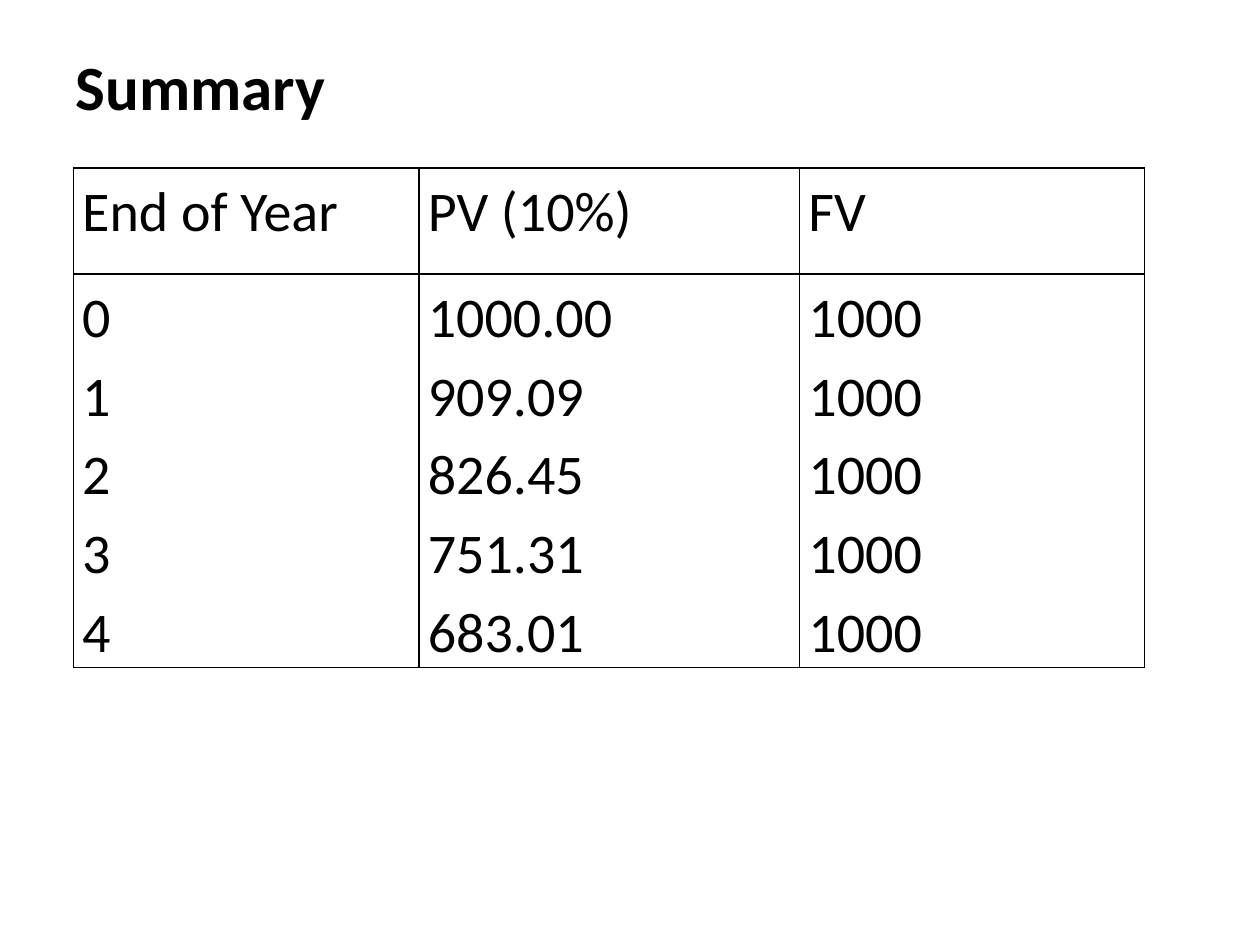
from lxml import etree
from pptx import Presentation
from pptx.dml.color import RGBColor
from pptx.enum import text
from pptx.oxml import ns
from pptx.util import Pt

BLACK = "000000"


def style(paragraph, size, bold=False):
    font = paragraph.font
    font.name, font.size, font.bold = "Calibri", Pt(size), bold
    font.color.rgb = RGBColor.from_string(BLACK)


def add_borders(cell):
    """Draw a 1 pt line on all four sides of a table cell."""
    properties = cell._tc.get_or_add_tcPr()
    for index, side in enumerate(("lnL", "lnR", "lnT", "lnB")):
        line = etree.Element(ns.qn(f"a:{side}"), w=str(Pt(1)))
        fill = etree.SubElement(line, ns.qn("a:solidFill"))
        etree.SubElement(fill, ns.qn("a:srgbClr"), val=BLACK)
        properties.insert(index, line)


deck = Presentation()
deck.slide_width, deck.slide_height = Pt(720), Pt(540)
page = deck.slides.add_slide(deck.slide_layouts[5])

title = page.shapes.title
title.left, title.top, title.width, title.height = Pt(36), Pt(21.6), Pt(648), Pt(356.4)
frame = title.text_frame
frame.text = "Summary"
frame.word_wrap = True
frame.auto_size = text.MSO_AUTO_SIZE.NONE
frame.vertical_anchor = text.MSO_ANCHOR.TOP
frame.margin_top = Pt(5.4)
heading = frame.paragraphs[0]
heading.alignment = text.PP_ALIGN.LEFT
style(heading, 36, bold=True)

columns = [
    ("End of Year", 197.5, ["0", "1", "2", "3", "4"]),
    ("PV (10%)", 217.5, ["1000.00", "909.09", "826.45", "751.31", "683.01"]),
    ("FV", 197, ["1000"] * 5),
]
row_heights = [60.5, 225]
table_width = sum(width for _, width, _ in columns)
table = page.shapes.add_table(
    len(row_heights), len(columns), Pt(42), Pt(96), Pt(table_width), Pt(sum(row_heights))
).table
table.horz_banding = False
table.first_row = False
for row, height in zip(table.rows, row_heights):
    row.height = Pt(height)

for index, (header, width, values) in enumerate(columns):
    table.columns[index].width = Pt(width)
    for row, lines in enumerate(([header], values)):
        cell = table.cell(row, index)
        cell.text = "\n".join(lines)
        cell.margin_left = cell.margin_right = Pt(5)
        cell.margin_top = cell.margin_bottom = Pt(0)
        cell.fill.background()
        add_borders(cell)
        for paragraph in cell.text_frame.paragraphs:
            paragraph.alignment = text.PP_ALIGN.JUSTIFY
            paragraph.line_spacing = 1.15
            style(paragraph, 32)

deck.save("out.pptx")
